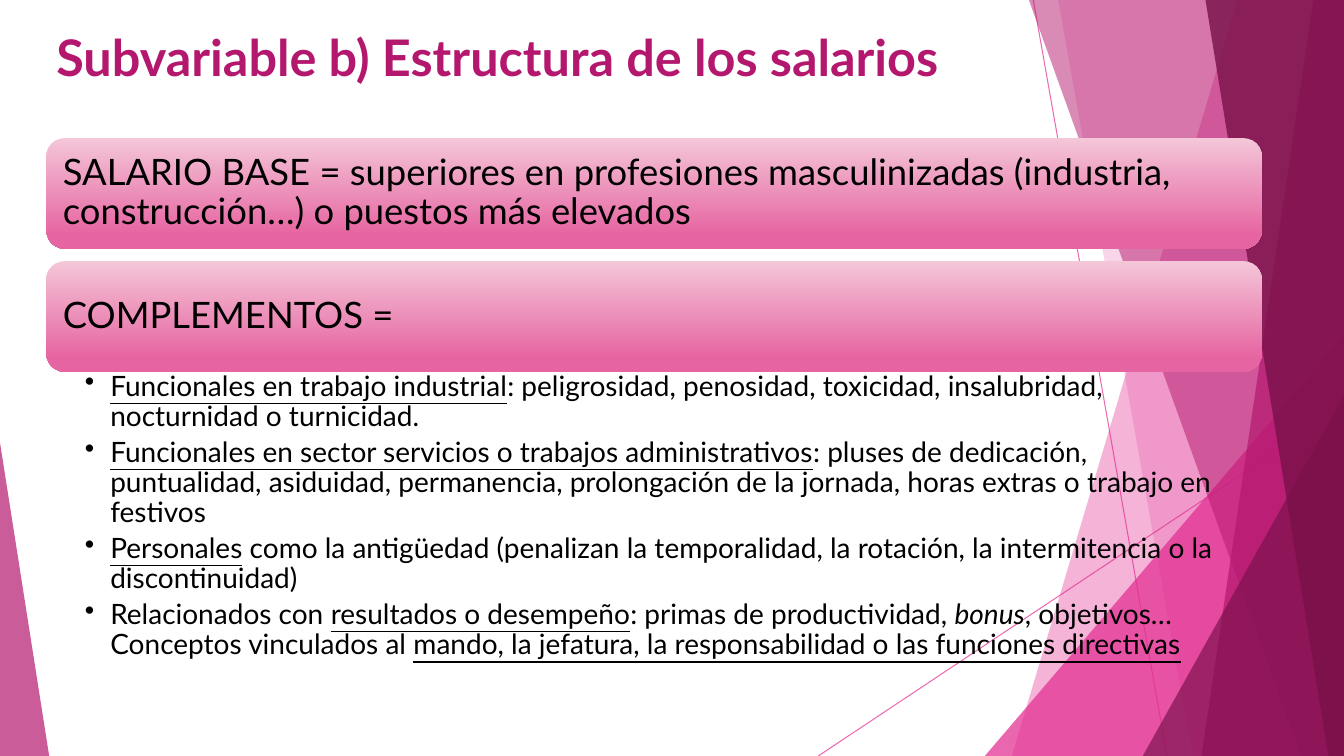
from lxml import etree
from pptx import Presentation
from pptx.dml.color import RGBColor
from pptx.enum.shapes import MSO_CONNECTOR, MSO_SHAPE
from pptx.enum.text import MSO_ANCHOR, PP_ALIGN
from pptx.oxml.ns import qn
from pptx.util import Cm, Pt

STRAIGHT = MSO_CONNECTOR.STRAIGHT
TRIANGLE = MSO_SHAPE.ISOSCELES_TRIANGLE
ROUNDED = MSO_SHAPE.ROUNDED_RECTANGLE
MIDDLE = MSO_ANCHOR.MIDDLE
LEFT = PP_ALIGN.LEFT

PINK = RGBColor(0xE3, 0x2D, 0x91)
MAGENTA = RGBColor(0xB4, 0x18, 0x6E)
PLUM = RGBColor(0x78, 0x10, 0x49)
BAR_TOP = RGBColor(0xF4, 0xC6, 0xD8)
BAR_BOTTOM = RGBColor(0xE6, 0x64, 0xA1)
BLACK = RGBColor(0, 0, 0)

FONT = "Lato"
WIDTH, HEIGHT = 33.87, 19.05
CONTENT_LEFT, CONTENT_WIDTH = 1.17, 30.63
BAR_START, BAR_STEP, BAR_HEIGHT = 3.48, 3.1, 2.79

PLAIN, UNDERLINE, ITALIC = "plain", "underline", "italic"
HEADINGS = [
    "SALARIO BASE = superiores en profesiones masculinizadas (industria, construcción…) o puestos más elevados",
    "COMPLEMENTOS =",
]
SUPPLEMENTS = [
    [("Funcionales en trabajo industrial", UNDERLINE),
     (": peligrosidad, penosidad, toxicidad, insalubridad, nocturnidad o turnicidad.", PLAIN)],
    [("Funcionales en sector servicios o trabajos administrativos", UNDERLINE),
     (": pluses de dedicación, puntualidad, asiduidad, permanencia, prolongación de la jornada, "
      "horas extras o trabajo en festivos", PLAIN)],
    [("Personales", UNDERLINE),
     (" como la antigüedad (penalizan la temporalidad, la rotación, la intermitencia o la discontinuidad)", PLAIN)],
    [("Relacionados con ", PLAIN), ("resultados o desempeño", UNDERLINE),
     (": primas de productividad, ", PLAIN), ("bonus", ITALIC),
     (", objetivos… Conceptos vinculados al ", PLAIN),
     ("mando, la jefatura, la responsabilidad o las funciones directivas", UNDERLINE)],
]


def set_opacity(color_format_owner, percent):
    for color in color_format_owner.iter(qn("a:srgbClr")):
        etree.SubElement(color, qn("a:alpha"), val=str(percent * 1000))


def paint(shape, color, opacity):
    shape.shadow.inherit = False
    shape.fill.solid()
    shape.fill.fore_color.rgb = color
    shape.line.fill.background()
    set_opacity(shape.fill._xPr, opacity)


def add_thin_line(slide, x1, y1, x2, y2):
    line = slide.shapes.add_connector(STRAIGHT, Cm(x1), Cm(y1), Cm(x2), Cm(y2))
    line.line.color.rgb = PINK
    line.line.width = Pt(0.75)
    properties = line._element.spPr
    set_opacity(properties, 70)
    etree.SubElement(properties, qn("a:effectLst"))


def add_right_band(slide, top_x, bottom_x, color, opacity):
    builder = slide.shapes.build_freeform(Cm(top_x), 0)
    corners = [(WIDTH, 0), (WIDTH, HEIGHT), (bottom_x, HEIGHT)]
    builder.add_line_segments([(Cm(x), Cm(y)) for x, y in corners])
    paint(builder.convert_to_shape(), color, opacity)


def add_corner_triangle(slide, left, top, width, apex, color, opacity):
    shape = slide.shapes.add_shape(TRIANGLE, Cm(left), Cm(top), Cm(width), Cm(HEIGHT - top))
    shape.adjustments[0] = apex
    paint(shape, color, opacity)


def set_insets(frame, left, top, right, bottom):
    frame.word_wrap = True
    frame.margin_left, frame.margin_top = Cm(left), Cm(top)
    frame.margin_right, frame.margin_bottom = Cm(right), Cm(bottom)


def style_paragraph(paragraph, size, color):
    paragraph.alignment = LEFT
    paragraph.font.name = FONT
    paragraph.font.size = Pt(size)
    paragraph.font.color.rgb = color


def add_title(slide, text):
    box = slide.shapes.add_textbox(Cm(CONTENT_LEFT), Cm(0.53), Cm(CONTENT_WIDTH), Cm(2.18))
    box.text_frame.word_wrap = True
    paragraph = box.text_frame.paragraphs[0]
    paragraph.text = text
    style_paragraph(paragraph, 36, MAGENTA)
    paragraph.font.bold = True


def add_heading_bar(slide, top, text):
    bar = slide.shapes.add_shape(ROUNDED, Cm(CONTENT_LEFT), Cm(top), Cm(CONTENT_WIDTH), Cm(BAR_HEIGHT))
    bar.shadow.inherit = False
    bar.line.fill.background()
    bar.fill.gradient()
    bar.fill.gradient_angle = 270
    for stop, position, color in zip(bar.fill.gradient_stops, (0, 0.88), (BAR_TOP, BAR_BOTTOM)):
        stop.position = position
        stop.color.rgb = color
    frame = bar.text_frame
    set_insets(frame, 0.28, 0.28, 0.28, 0.28)
    frame.vertical_anchor = MIDDLE
    paragraph = frame.paragraphs[0]
    paragraph.text = text
    paragraph.line_spacing = 0.9
    style_paragraph(paragraph, 26, BLACK)


def add_bullet(paragraph):
    properties = paragraph._p.get_or_add_pPr()
    properties.set("marL", str(Cm(0.64)))
    properties.set("indent", str(Cm(-0.64)))
    bullet = etree.Element(qn("a:buChar"), char="•")
    properties.find(qn("a:defRPr")).addprevious(bullet)


def add_bullet_list(slide, items):
    box = slide.shapes.add_textbox(Cm(CONTENT_LEFT), Cm(9.27), Cm(CONTENT_WIDTH), Cm(8.59))
    frame = box.text_frame
    set_insets(frame, 0.97, 0.1, 0.51, 0.1)
    for index, runs in enumerate(items):
        paragraph = frame.add_paragraph() if index else frame.paragraphs[0]
        for text, emphasis in runs:
            run = paragraph.add_run()
            run.text = text
            if emphasis == UNDERLINE:
                run.font.underline = True
            elif emphasis == ITALIC:
                run.font.italic = True
        paragraph.line_spacing = 0.9
        paragraph.space_after = Pt(4)
        style_paragraph(paragraph, 20, BLACK)
        add_bullet(paragraph)


def add_decoration(slide):
    add_thin_line(slide, 26.04, 0, 29.41, HEIGHT)
    add_thin_line(slide, WIDTH, 10.24, 20.62, HEIGHT)
    add_right_band(slide, 31.19, 25.5, PINK, 36)
    add_right_band(slide, 26.67, 30.05, PINK, 20)
    add_corner_triangle(slide, 24.82, 8.46, 9.05, 1, PINK, 72)
    add_right_band(slide, 25.93, 32.79, MAGENTA, 50)
    add_right_band(slide, 33.1, 30.28, MAGENTA, 70)
    add_right_band(slide, 30.38, 33.48, PLUM, 80)
    add_corner_triangle(slide, 28.8, 9.98, 5.07, 1, PLUM, 66)
    add_corner_triangle(slide, 0, 11.15, 1.24, 0, MAGENTA, 70)


def main():
    presentation = Presentation()
    presentation.slide_width, presentation.slide_height = Cm(WIDTH), Cm(HEIGHT)
    slide = presentation.slides.add_slide(presentation.slide_layouts[6])
    add_decoration(slide)
    add_title(slide, "Subvariable b) Estructura de los salarios")
    for index, heading in enumerate(HEADINGS):
        add_heading_bar(slide, BAR_START + index * BAR_STEP, heading)
    add_bullet_list(slide, SUPPLEMENTS)
    presentation.save("out.pptx")


if __name__ == "__main__":
    main()
